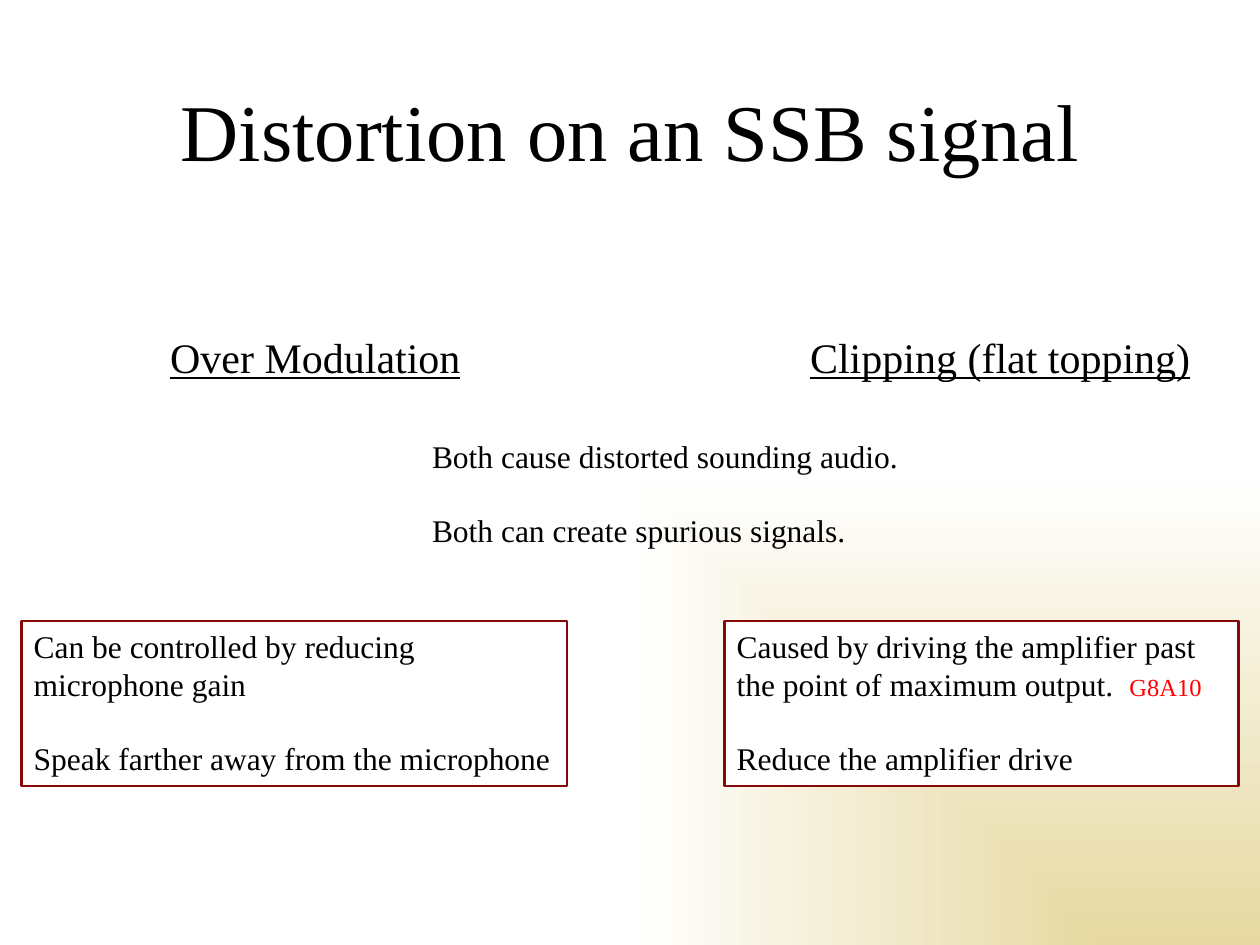
from dataclasses import dataclass

from lxml import etree
from pptx import Presentation
from pptx.dml.color import RGBColor as RGB
from pptx.enum.shapes import MSO_SHAPE as Shape
from pptx.enum.text import MSO_ANCHOR as Anchor, MSO_AUTO_SIZE as AutoSize, PP_ALIGN as Align
from pptx.oxml.ns import qn
from pptx.util import Cm, Pt


@dataclass(frozen=True)
class Theme:
    font: str = "Times New Roman"
    text: RGB = RGB(0x00, 0x00, 0x00)
    reference: RGB = RGB(0xFF, 0x00, 0x00)
    border: RGB = RGB(0x86, 0x09, 0x08)
    paper: RGB = RGB(0xFF, 0xFF, 0xFF)
    sand: RGB = RGB(0xE6, 0xD9, 0xA1)
    title_size: float = 46
    heading_size: float = 24
    body_size: float = 18
    reference_size: float = 14
    border_width: float = 1.5
    paragraph_gap: float = 20.7


class SlideBuilder:
    def __init__(self, prs, theme):
        self.theme = theme
        self.s = prs.slides.add_slide(prs.slide_layouts[6])

    def background(self):
        """Glow that spreads from the bottom right corner."""
        fill = self.s.background.fill
        fill.gradient()
        for stop, color in zip(fill.gradient_stops, (self.theme.sand, self.theme.paper)):
            stop.color.rgb = color
        grad = self.s.element.find(".//" + qn("a:gradFill"))
        for clr in grad.iter(qn("a:srgbClr")):
            etree.SubElement(clr, qn("a:alpha"), val="48000")
        grad.remove(grad.find(qn("a:lin")))
        glow = etree.SubElement(grad, qn("a:path"), {"path": "rect"})
        etree.SubElement(glow, qn("a:fillToRect"), l="100000", t="100000")

    def style(self, r, size, color=None, underline=None):
        r.font.name = self.theme.font
        r.font.size = Pt(size)
        r.font.color.rgb = color or self.theme.text
        r.font.underline = underline

    def set_lines(self, sp, lines, size, underline=None, align=Align.LEFT):
        tf = sp.text_frame
        tf.text = "\n".join(lines)
        for i, p in enumerate(tf.paragraphs):
            p.alignment = align
            if i:
                p.space_before = Pt(self.theme.paragraph_gap)
            for r in p.runs:
                self.style(r, size, underline=underline)

    def title(self, text, *box):
        sp = self.s.shapes.add_textbox(*map(Cm, box))
        sp.text_frame.word_wrap = True
        sp.text_frame.vertical_anchor = Anchor.MIDDLE
        self.set_lines(sp, [text], self.theme.title_size, align=Align.CENTER)

    def label(self, lines, size, *box, wrap=False, underline=None):
        sp = self.s.shapes.add_textbox(*map(Cm, box))
        sp.text_frame.word_wrap = wrap
        sp.text_frame.auto_size = AutoSize.SHAPE_TO_FIT_TEXT
        self.set_lines(sp, lines, size, underline)

    def panel(self, lines, *box, reference=None):
        sp = self.s.shapes.add_shape(Shape.RECTANGLE, *map(Cm, box))
        sp.shadow.inherit = False
        sp.fill.solid()
        sp.fill.fore_color.rgb = self.theme.paper
        sp.line.color.rgb = self.theme.border
        sp.line.width = Pt(self.theme.border_width)
        tf = sp.text_frame
        tf.word_wrap = True
        tf.vertical_anchor = Anchor.TOP
        self.set_lines(sp, lines, self.theme.body_size)
        if reference:
            r = tf.paragraphs[0].add_run()
            r.text = reference
            self.style(r, self.theme.reference_size, self.theme.reference)


def main():
    prs = Presentation()
    prs.slide_width, prs.slide_height = Cm(25.4), Cm(19.05)
    theme = Theme()
    slide = SlideBuilder(prs, theme)

    # Background and title
    slide.background()
    slide.title("Distortion on an SSB signal", 2.54, 1.4, 20.32, 2.41)

    # Headings of the two causes
    heading_top, heading_height = 6.55, 1.27
    slide.label(["Over Modulation"], theme.heading_size,
                3.18, heading_top, 6.43, heading_height, underline=True)
    slide.label(["Clipping (flat topping)"], theme.heading_size,
                16.08, heading_top, 9.32, heading_height, wrap=True, underline=True)

    # Effects they share
    slide.label(["Both cause distorted sounding audio.", "Both can create spurious signals."],
                theme.body_size, 8.46, 8.69, 9.96, 2.57)

    # Remedies
    panel_top, panel_height = 12.52, 3.33
    slide.panel(["Can be controlled by reducing microphone gain",
                 "Speak farther away from the microphone"],
                0.43, panel_top, 11, panel_height)
    slide.panel(["Caused by driving the amplifier past the point of maximum output.  ",
                 "Reduce the amplifier drive"],
                14.6, panel_top, 10.37, panel_height, reference="G8A10")

    prs.save("out.pptx")


if __name__ == "__main__":
    main()
